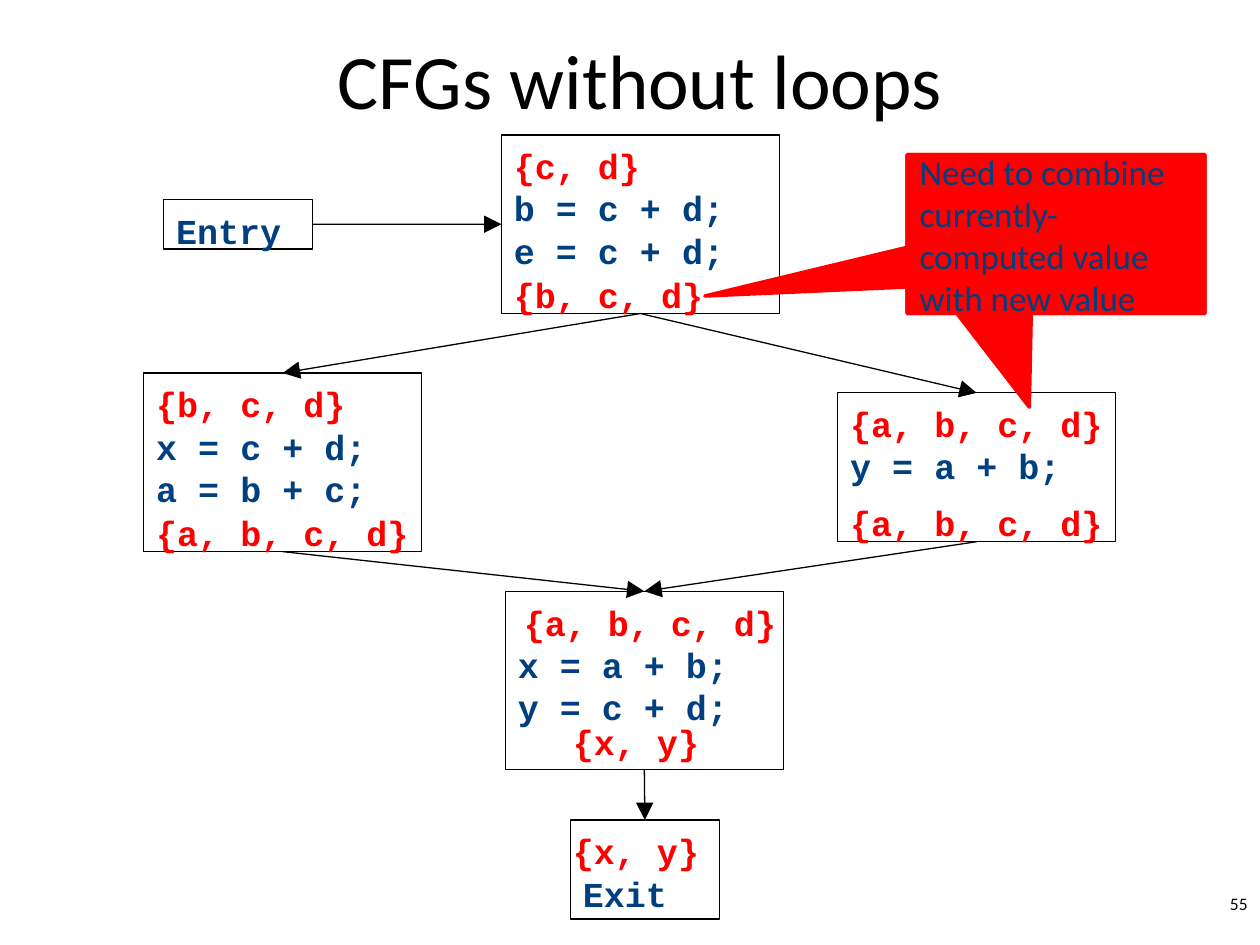
from pptx import Presentation
from pptx.dml.color import RGBColor
from pptx.enum.shapes import MSO_CONNECTOR as LINE, MSO_SHAPE as SHAPE
from pptx.enum.text import MSO_ANCHOR as ANCHOR, PP_ALIGN as ALIGN
from pptx.oxml.ns import qn
from pptx.util import Cm, Pt
from lxml.etree import SubElement

COLORS = {"ink": "000000", "code": "004080", "live": "FF0000"}
TOP, LEFT, BOTTOM, RIGHT = range(4)
LINE_H = 0.85


class Deck:
    """Style and current slide of the control flow graph."""

    def __init__(self, prs):
        self.prs = prs
        self.s = prs.slides.add_slide(prs.slide_layouts[6])
        self.mono = {"name": "Courier New", "size": Pt(20), "bold": True}

    def color(self, name):
        return RGBColor.from_string(COLORS[name])

    def put_lines(self, sp, lines, font, color, frame=None, align=ALIGN.LEFT, spacing=None):
        tf = sp.text_frame
        for key, value in {"word_wrap": True, "vertical_anchor": ANCHOR.TOP, **(frame or {})}.items():
            setattr(tf, key, value)
        p = tf.paragraphs[0]
        p.alignment = align
        p.line_spacing = spacing
        for i, line in enumerate(lines):
            if i:
                p.add_line_break()
            r = p.add_run()
            r.text = line
            for key, value in font.items():
                setattr(r.font, key, value)
            r.font.color.rgb = self.color(color)

    def code(self, sp, lines, color, skip=0):
        frame = {"margin_top": Cm(0.2 + skip * LINE_H), "margin_right": 0, "margin_bottom": 0}
        self.put_lines(sp, lines, self.mono, color, frame, spacing=Pt(24))

    def text(self, text, x, y, w, h, size, align, anchor=ANCHOR.TOP):
        sp = self.s.shapes.add_textbox(Cm(x), Cm(y), Cm(w), Cm(h))
        font = {"name": "Calibri", "size": Pt(size)}
        self.put_lines(sp, [text], font, "ink", {"vertical_anchor": anchor}, align)

    def block(self, lines, x, y, w, h, skip=1):
        sp = self.s.shapes.add_shape(SHAPE.RECTANGLE, Cm(x), Cm(y), Cm(w), Cm(h))
        sp.shadow.inherit = False
        sp.fill.background()
        sp.line.color.rgb = self.color("ink")
        sp.line.width = Pt(0.75)
        self.code(sp, lines, "code", skip)
        return sp

    def live_set(self, text, x, y, w=5.6):
        self.code(self.s.shapes.add_textbox(Cm(x), Cm(y), Cm(w), Cm(1)), [text], "live")

    def arrow(self, start, end, start_site=BOTTOM, end_site=TOP):
        c = self.s.shapes.add_connector(LINE.STRAIGHT, 0, 0, 0, 0)
        c.begin_connect(start, start_site)
        c.end_connect(end, end_site)
        c.line.color.rgb = self.color("ink")
        c.line.width = Pt(0.75)
        props = c.element.spPr
        SubElement(props.get_or_add_ln(), qn("a:tailEnd"), type="triangle", w="lg", len="lg")
        SubElement(props, qn("a:effectLst"))

    def callouts(self, text, x, y, w, h, tips):
        group = self.s.shapes.add_group_shape()
        for tip in tips:
            sp = group.shapes.add_shape(SHAPE.RECTANGULAR_CALLOUT, Cm(x), Cm(y), Cm(w), Cm(h))
            for i, value in enumerate(tip):
                sp.adjustments[i] = value
            sp.shadow.inherit = False
            sp.fill.solid()
            sp.fill.fore_color.rgb = sp.line.color.rgb = self.color("live")
            sp.line.width = Pt(2)
            font = {"name": "Calibri", "size": Pt(20)}
            self.put_lines(sp, [text], font, "code", {"vertical_anchor": ANCHOR.MIDDLE})


def main():
    prs = Presentation()
    prs.slide_width, prs.slide_height = Cm(25.4), Cm(19.05)
    d = Deck(prs)
    d.text("CFGs without loops", 2.11, 0, 21.59, 3.17, 44, ALIGN.CENTER, ANCHOR.MIDDLE)
    d.text("55", 20.12, 17.88, 5.28, 0.76, 10, ALIGN.RIGHT)

    leave = d.block(["Exit"], 11.5, 16.53, 3, 2)
    join = d.block(["x = a + b;", "y = c + d;"], 10.19, 11.92, 5.6, 3.6)
    right = d.block(["y = a + b;"], 16.89, 7.92, 5.6, 3)
    left = d.block(["x = c + d;", "a = b + c;"], 2.9, 7.52, 5.6, 3.6)
    fork = d.block(["b = c + d;", "e = c + d;"], 10.11, 2.72, 5.6, 3.6)
    entry = d.block(["Entry"], 3.3, 4.02, 3, 1, skip=0)

    for start, end in [(fork, left), (fork, right), (left, join), (right, join), (join, leave)]:
        d.arrow(start, end)
    d.arrow(entry, fork, RIGHT, LEFT)

    for y in (16.53, 14.33):
        d.live_set("{x, y}", 11.3, y, 3.2)
    for x, y in [(10.31, 11.92), (2.9, 10.12), (16.89, 9.92), (16.89, 7.92)]:
        d.live_set("{a, b, c, d}", x, y)
    for x, y in [(2.9, 7.52), (10.11, 5.32)]:
        d.live_set("{b, c, d}", x, y)
    d.live_set("{c, d}", 10.11, 2.72)

    d.callouts("Need to combine currently-computed value with new value",
               18.29, 3.12, 6, 3.2, [(-1.18, 0.39), (-0.09, 1.09)])
    prs.save("out.pptx")


if __name__ == "__main__":
    main()
